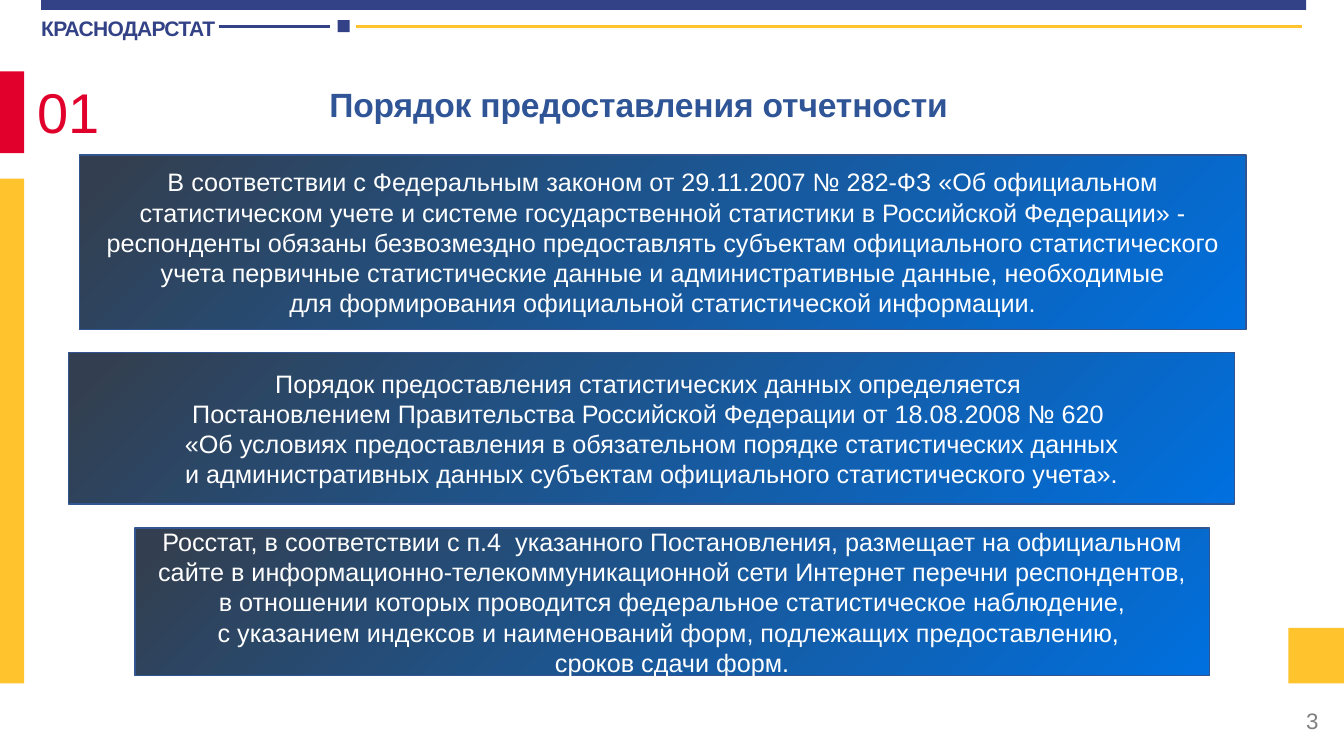
from lxml import etree
from pptx import Presentation
from pptx.dml.color import RGBColor
from pptx.enum import shapes, text
from pptx.oxml.ns import qn
from pptx.util import Cm, Pt

NAVY = RGBColor(0x33, 0x42, 0x86)
RED = RGBColor(0xE1, 0x00, 0x2B)
YELLOW = RGBColor(0xFF, 0xC3, 0x2E)
TITLE_BLUE = RGBColor(0x2F, 0x55, 0x97)
BORDER_BLUE = RGBColor(0x32, 0x54, 0x91)
SLATE = RGBColor(0x33, 0x3F, 0x50)
BRIGHT_BLUE = RGBColor(0x00, 0x70, 0xDF)
WHITE = RGBColor(0xFF, 0xFF, 0xFF)
GRAY = RGBColor(0x80, 0x80, 0x80)

WIDTH, HEIGHT = 33.87, 19.05
STRIPE = 0.61
LEFT, CENTER, RIGHT = text.PP_ALIGN.LEFT, text.PP_ALIGN.CENTER, text.PP_ALIGN.RIGHT
TOP, MIDDLE = text.MSO_ANCHOR.TOP, text.MSO_ANCHOR.MIDDLE

# Each panel: its box (left, top, width, height) and paragraphs made of lines
PANELS = [
    ((2.01, 3.91, 29.39, 4.39), [
        ["В соответствии с Федеральным законом от 29.11.2007 № 282-ФЗ «Об официальном "
         "статистическом учете и системе государственной статистики в Российской Федерации» - "
         "респонденты обязаны безвозмездно предоставлять субъектам официального статистического "
         "учета первичные статистические данные и административные данные, необходимые",
         "для формирования официальной статистической информации."]]),
    ((1.73, 8.89, 29.39, 3.81), [
        ["Порядок предоставления статистических данных определяется "],
        ["Постановлением Правительства Российской Федерации от 18.08.2008 № 620 "],
        ["«Об условиях предоставления в обязательном порядке статистических данных",
         "и административных данных субъектам официального статистического учета»."]]),
    ((3.4, 13.31, 27.08, 3.71), [
        ["Росстат, в соответствии с п.4  указанного Постановления, размещает на официальном "
         "сайте в информационно-телекоммуникационной сети Интернет перечни респондентов,",
         "в отношении которых проводится федеральное статистическое наблюдение,",
         "с указанием индексов и наименований форм, подлежащих предоставлению, ",
         "сроков сдачи форм."]]),
]


def write(sp, paragraphs, size, color, align, anchor=MIDDLE, bold=False, spacing=0):
    """Fill a shape with paragraphs, each a list of lines; spacing is in points."""
    tf = sp.text_frame
    tf.word_wrap = True
    tf.auto_size = text.MSO_AUTO_SIZE.NONE
    tf.vertical_anchor = anchor
    for i, lines in enumerate(paragraphs):
        p = tf.paragraphs[0] if i == 0 else tf.add_paragraph()
        p.alignment = align
        for j, line in enumerate(lines):
            if j:
                p.add_line_break()
            r = p.add_run()
            r.text = line
            r.font.name, r.font.size, r.font.bold = "Arial", Pt(size), bold
            r.font.color.rgb = color
            if spacing:
                r.font._element.set("spc", str(round(spacing * 100)))
        # Line breaks take the size of the text around them
        for br in p._p.findall(qn("a:br")):
            etree.SubElement(br, qn("a:rPr"), sz=str(size * 100))
    return tf


def add_rect(s, box):
    sp = s.shapes.add_shape(shapes.MSO_SHAPE.RECTANGLE, *map(Cm, box))
    sp.shadow.inherit = False
    return sp


def add_block(s, box, color):
    sp = add_rect(s, box)
    sp.fill.solid()
    sp.fill.fore_color.rgb = color
    sp.line.fill.background()


def add_label(s, box, label, size, color, align, **style):
    sp = s.shapes.add_textbox(*map(Cm, box))
    return write(sp, [[label]], size, color, align, **style)


def add_rule(s, x1, x2, y, color):
    c = s.shapes.add_connector(shapes.MSO_CONNECTOR.STRAIGHT, Cm(x1), Cm(y), Cm(x2), Cm(y))
    c.line.color.rgb, c.line.width = color, Pt(2)
    etree.SubElement(c._element.spPr, qn("a:effectLst"))


def add_header(s, left, top, width):
    add_block(s, (left, top, width, 0.25), NAVY)
    tf = add_label(s, (left, top + 0.33, 4.52, 0.69), "КРАСНОДАРСТАТ", 15, NAVY, LEFT,
                   anchor=TOP, bold=True, spacing=-0.5)
    tf.margin_left = tf.margin_right = tf.margin_bottom = 0
    tf.margin_top = Cm(0.05)
    tf.word_wrap = False
    y, mark = top + 0.66, 0.3
    add_rule(s, left + 4.47, left + 7.27, y, NAVY)
    add_block(s, (left + 7.47, y - mark / 2, mark, mark), NAVY)
    add_rule(s, left + 7.93, left + width - 0.11, y, YELLOW)


def add_side_blocks(s, top, bottom):
    add_block(s, (0, top, STRIPE, 2.06), RED)
    add_block(s, (0, top + 2.7, STRIPE, bottom - top - 2.7), YELLOW)
    corner = 1.4
    add_block(s, (WIDTH - corner, bottom - corner, corner, corner), YELLOW)


def add_heading(s, left, top, width, height):
    add_label(s, (left, top - 0.15, 2.11, 1.96), "01", 40, RED, LEFT, anchor=TOP)
    title = s.shapes.title
    title.left, title.top = Cm(left + 5.1), Cm(top)
    title.width, title.height = Cm(width - 5.1), Cm(height)
    write(title, [["Порядок предоставления отчетности"]], 24, TITLE_BLUE, CENTER,
          bold=True, spacing=-0.1)


def add_panel(s, box, paragraphs):
    sp = add_rect(s, box)
    sp.fill.gradient()
    sp.fill.gradient_angle = 315
    for stop, position, color in zip(sp.fill.gradient_stops, (0.03, 1), (SLATE, BRIGHT_BLUE)):
        stop.position, stop.color.rgb = position, color
    sp.line.color.rgb, sp.line.width = BORDER_BLUE, Pt(1)
    write(sp, paragraphs, 18, WHITE, CENTER)


def main():
    prs = Presentation()
    prs.slide_width, prs.slide_height = Cm(WIDTH), Cm(HEIGHT)
    s = prs.slides.add_slide(prs.slide_layouts[5])
    add_header(s, 1.04, 0, 31.88)
    add_side_blocks(s, 1.8, 17.22)
    add_heading(s, 0.69, 1.98, 25.7, 1.3)
    for box, paragraphs in PANELS:
        add_panel(s, box, paragraphs)
    add_label(s, (25.86, 17.65, 7.62, 1.02), "3", 16, GRAY, RIGHT)
    prs.save("out.pptx")


if __name__ == "__main__":
    main()
